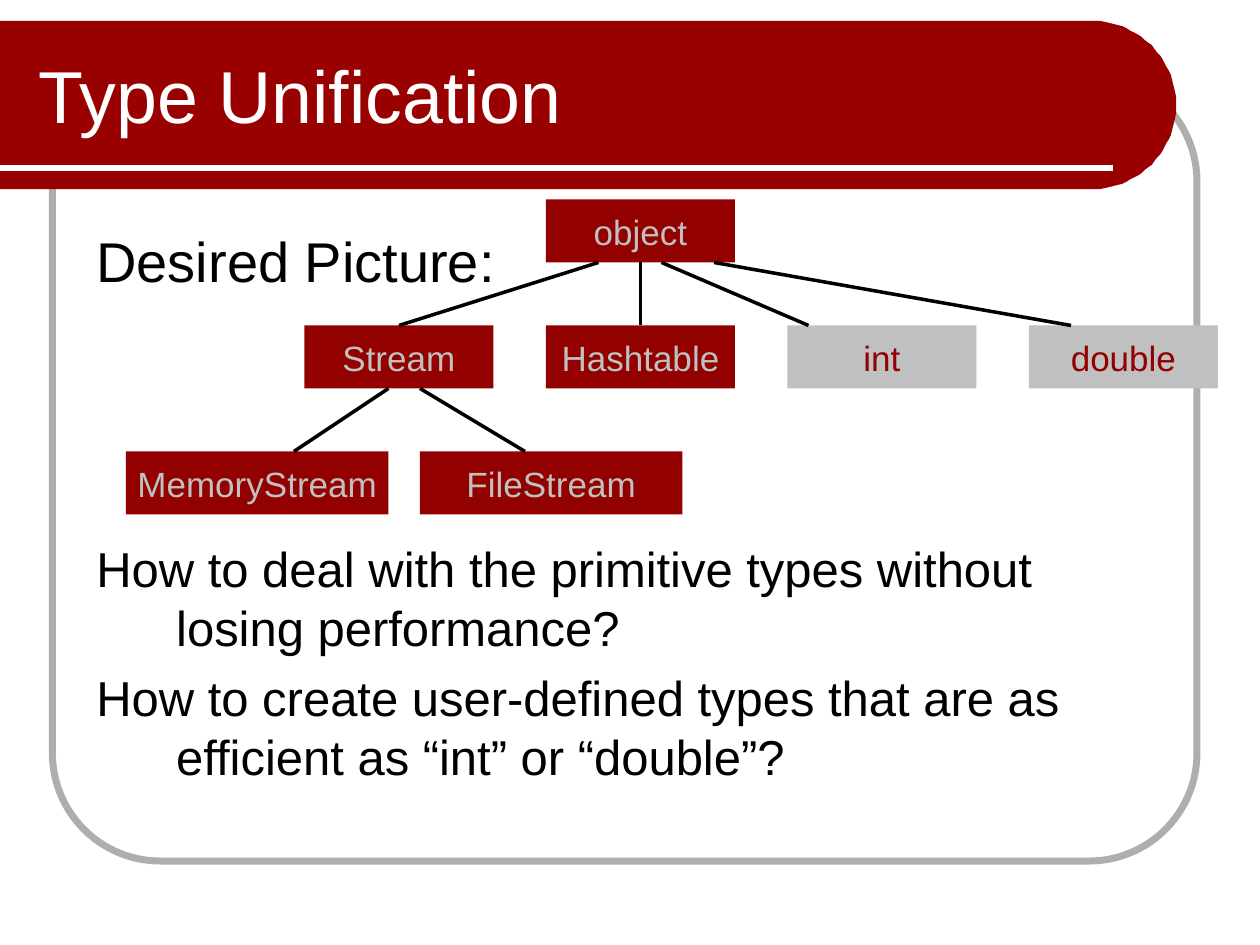
import math

import lxml.etree
import pptx
import pptx.dml.color
import pptx.enum.shapes
import pptx.enum.text
import pptx.oxml.ns
import pptx.util

PX = 7620  # EMU in one px, 120 px to the inch
THEME = {
    "font": "Arial",
    "band": "990000", "frame": "AEAEAE", "white": "FFFFFF", "black": "000000",
    "red": "920000", "gray": "C0C0C0",
    "title": 42, "lead": 32, "body": 28, "node": 20,
}
ALIGN = pptx.enum.text.PP_ALIGN
MIDDLE = pptx.enum.text.MSO_ANCHOR.MIDDLE
SHAPE = pptx.enum.shapes.MSO_SHAPE


def color(name):
    return pptx.dml.color.RGBColor.from_string(THEME[name])


def write(para, text, size, ink, **form):
    para.text = text
    for key, value in form.items():
        setattr(para, key, value)
    font = {"name": THEME["font"], "size": pptx.util.Pt(THEME[size])}
    for key, value in font.items():
        setattr(para.font, key, value)
    para.font.color.rgb = color(ink)


deck = pptx.Presentation()
deck.slide_width, deck.slide_height = 1200 * PX, 900 * PX
slide = deck.slides.add_slide(deck.slide_layouts[5])
shapes = slide.shapes

# Gray rounded frame
frame = shapes.add_shape(SHAPE.ROUNDED_RECTANGLE, 50 * PX, 70 * PX, 1090 * PX, 750 * PX)
frame.adjustments[0] = 0.137
frame.shadow.inherit = False
frame.fill.background()
frame.line.color.rgb = color("frame")
frame.line.width = pptx.util.Pt(4)

# Red band with a half-round right end
arc = [(1040 + 80 * math.sin(math.radians(turn)), 100 - 80 * math.cos(math.radians(turn)))
       for turn in range(0, 181, 3)]
pen = shapes.build_freeform(0, 20, scale=PX)
pen.add_line_segments(arc + [(0, 180)], close=True)
band = pen.convert_to_shape()
band.shadow.inherit = False
band.fill.solid()
band.fill.fore_color.rgb = color("band")
band.line.fill.background()

# Title, brought in front of the band
title = shapes.title
place = {"left": 25, "top": 30, "width": 935, "height": 120}
for key, value in place.items():
    setattr(title, key, value * PX)
title.text_frame.vertical_anchor = MIDDLE
write(title.text_frame.paragraphs[0], "Type Unification", "title", "white",
      alignment=ALIGN.LEFT)
band.element.addnext(title.element)

# Body text with hanging indents; the wide gap leaves room for the tree
body = shapes.add_textbox(80 * PX, 210 * PX, 1040 * PX, 580 * PX).text_frame
body.word_wrap = True
lines = [
    ("Desired Picture:", "lead", 0),
    ("How to deal with the primitive types without losing performance?", "body", 140),
    ("How to create user-defined types that are as efficient as “int” or “double”?",
     "body", 6.5),
]
for row, (text, size, gap) in enumerate(lines):
    para = body.add_paragraph() if row else body.paragraphs[0]
    props = para._p.get_or_add_pPr()
    props.set("marL", str(76 * PX))
    props.set("indent", str(-76 * PX))
    write(para, text, size, "black", space_before=pptx.util.Pt(gap))

# Class tree: name, left, level, width, fill, ink
nodes = [
    ("object", 520, 0, 180, "red", "gray"),
    ("Stream", 290, 1, 180, "red", "gray"),
    ("Hashtable", 520, 1, 180, "red", "gray"),
    ("int", 750, 1, 180, "gray", "red"),
    ("double", 980, 1, 180, "gray", "red"),
    ("MemoryStream", 120, 2, 250, "red", "gray"),
    ("FileStream", 400, 2, 250, "red", "gray"),
]
boxes = {}
for name, left, level, width, fill, ink in nodes:
    box = shapes.add_shape(SHAPE.RECTANGLE, left * PX, (190 + 120 * level) * PX,
                           width * PX, 60 * PX)
    box.shadow.inherit = False
    box.fill.solid()
    box.fill.fore_color.rgb = color(fill)
    box.line.fill.background()
    box.text_frame.word_wrap = False
    box.text_frame.vertical_anchor = MIDDLE
    write(box.text_frame.paragraphs[0], name, "node", ink, alignment=ALIGN.CENTER)
    boxes[name] = box

# Title rule and tree links: start, end, ink, points, parent, child
links = [
    ((0, 160), (1060, 160), "white", 3, None, None),
    ((570, 250), (380, 310), "black", 2, None, "Stream"),
    ((610, 250), (610, 310), "black", 2, "object", "Hashtable"),
    ((630, 250), (770, 310), "black", 2, None, None),
    ((680, 250), (1020, 310), "black", 2, None, None),
    ((370, 370), (280, 430), "black", 2, None, None),
    ((400, 370), (500, 430), "black", 2, None, None),
]
for start, end, ink, points, parent, child in links:
    ends = [value * PX for value in start + end]
    link = shapes.add_connector(pptx.enum.shapes.MSO_CONNECTOR.STRAIGHT, *ends)
    link.line.color.rgb = color(ink)
    link.line.width = pptx.util.Pt(points)
    lxml.etree.SubElement(link.element.spPr, pptx.oxml.ns.qn("a:effectLst"))
    if parent:
        link.begin_connect(boxes[parent], 2)
    if child:
        link.end_connect(boxes[child], 0)

deck.save("out.pptx")
